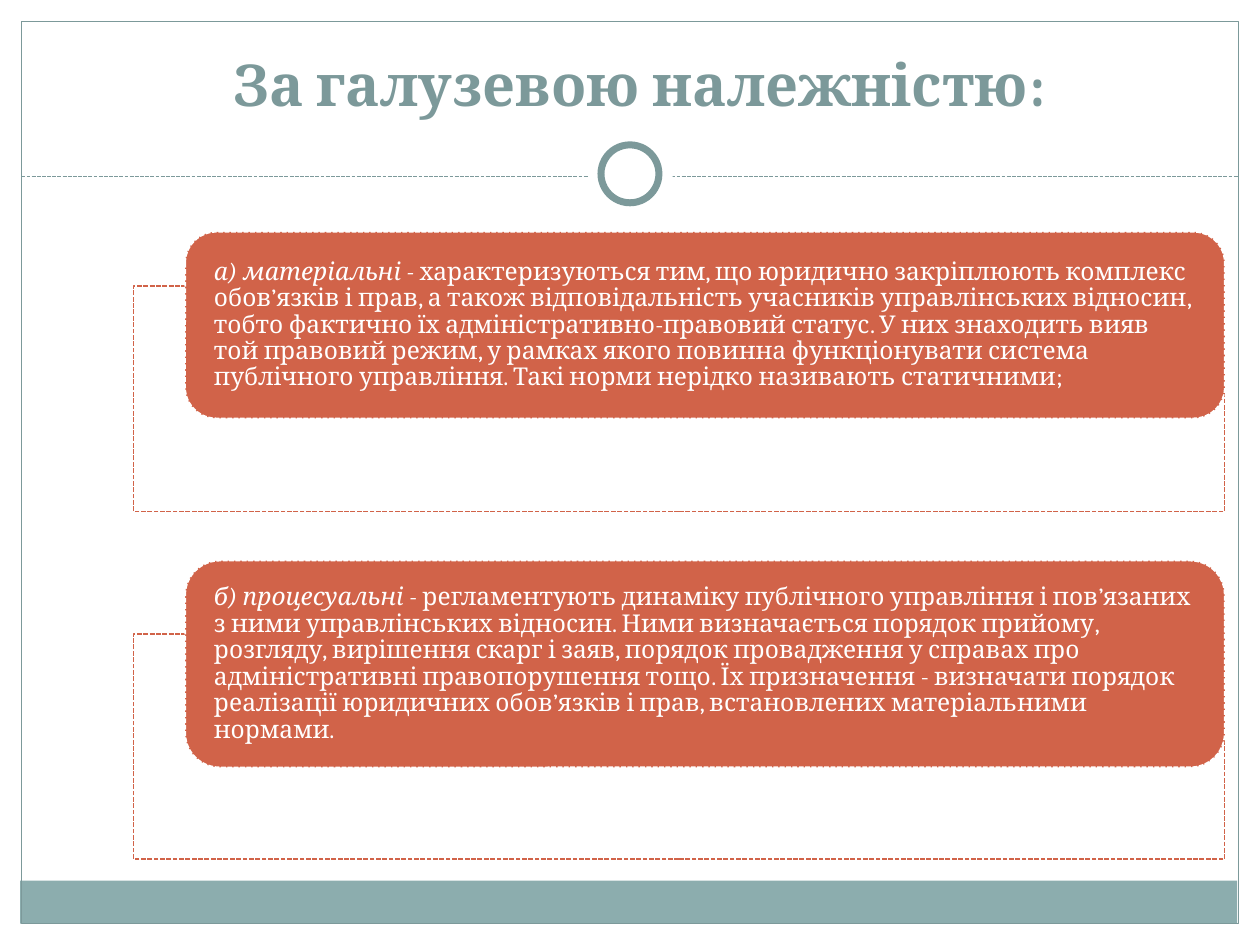
from pptx import Presentation
from pptx.dml.color import RGBColor
from pptx.enum.dml import MSO_LINE
from pptx.enum.shapes import MSO_CONNECTOR, MSO_SHAPE
from pptx.enum.text import MSO_ANCHOR, PP_ALIGN
from pptx.oxml.ns import qn
from pptx.util import Inches, Pt
from lxml.etree import SubElement

FONT = "Cambria"
COLORS = {"white": "FFFFFF", "teal": "7C999A", "band": "8CADAE", "rust": "D16349"}

# Frame top, card top, card height, lead words, explanation
NORMS = [
    (2.27, 1.84, 1.48, "а) матеріальні -",
     " характеризуються тим, що юридично закріплюють комплекс обов’язків і прав, "
     "а також відповідальність учасників управлінських відносин, тобто фактично їх "
     "адміністративно-правовий статус. У них знаходить вияв той правовий режим, у рамках "
     "якого повинна функціонувати система публічного управління. Такі норми нерідко "
     "називають статичними;"),
    (5.03, 4.45, 1.64, "б) процесуальні -",
     " регламентують динаміку публічного управління і пов’язаних з ними управлінських "
     "відносин. Ними визначається порядок прийому, розгляду, вирішення скарг і заяв, "
     "порядок провадження у справах про адміністративні правопорушення тощо. Їх "
     "призначення - визначати порядок реалізації юридичних обов’язків і прав, "
     "встановлених матеріальними нормами."),
]


def rgb(name):
    return RGBColor.from_string(COLORS[name])


def style_line(line, color, width, dashed=False):
    line.color.rgb = rgb(color)
    line.width = Pt(width)
    if dashed:
        line.dash_style = MSO_LINE.SQUARE_DOT


def add_box(slide, kind, box, fill=None, line=None, width=0.75, dashed=False):
    sp = slide.shapes.add_shape(kind, *map(Inches, box))
    sp.shadow.inherit = False
    if fill:
        sp.fill.solid()
        sp.fill.fore_color.rgb = rgb(fill)
    else:
        sp.fill.background()
    if line:
        style_line(sp.line, line, width, dashed)
    else:
        sp.line.fill.background()
    return sp


def add_rule(slide, x1, x2, y):
    cn = slide.shapes.add_connector(
        MSO_CONNECTOR.STRAIGHT, Inches(x1), Inches(y), Inches(x2), Inches(y))
    style_line(cn.line, "teal", 0.75, dashed=True)
    SubElement(cn._element.spPr, qn("a:effectLst"))


def add_run(p, text, size, color, bold=False, italic=False):
    r = p.add_run()
    r.text = text
    r.font.name = FONT
    r.font.size = Pt(size)
    r.font.color.rgb = rgb(color)
    r.font.bold = bold
    r.font.italic = italic


def set_margins(tf, side=0.1, top=0.05):
    tf.margin_left = tf.margin_right = Inches(side)
    tf.margin_top = tf.margin_bottom = Inches(top)


def add_title(slide, text):
    sp = slide.shapes.title
    sp.left, sp.top, sp.width, sp.height = map(Inches, (0.5, 0.3, 9.15, 0.69))
    tf = sp.text_frame
    tf.word_wrap = True
    tf.vertical_anchor = MSO_ANCHOR.BOTTOM
    set_margins(tf)
    p = tf.paragraphs[0]
    p.alignment = PP_ALIGN.CENTER
    add_run(p, text, 33, "teal", bold=True)


def add_decor(slide):
    add_box(slide, MSO_SHAPE.RECTANGLE, (0.16, 6.99, 9.66, 0.34), fill="band")
    add_box(slide, MSO_SHAPE.RECTANGLE, (0.17, 0.17, 9.66, 7.16), line="teal")
    add_rule(slide, 0.17, 9.83, 1.4)
    # White disc breaks the rule around the ring
    add_box(slide, MSO_SHAPE.OVAL, (4.67, 1.05, 0.67, 0.67), fill="white")
    add_box(slide, MSO_SHAPE.OVAL, (4.77, 1.15, 0.46, 0.46), fill="white",
            line="teal", width=4)


def add_norm(slide, frame_top, card_top, height, lead, body):
    add_box(slide, MSO_SHAPE.RECTANGLE, (1.06, frame_top, 8.66, 1.79), fill="white",
            line="rust", width=0.9, dashed=True)
    sp = add_box(slide, MSO_SHAPE.ROUNDED_RECTANGLE, (1.47, card_top, 8.25, height),
                 fill="rust", line="white", width=0.9, dashed=True)
    tf = sp.text_frame
    tf.word_wrap = True
    tf.vertical_anchor = MSO_ANCHOR.MIDDLE
    # Rounded corners already inset the text by about 5% of the height
    set_margins(tf, side=0.23 - 0.05 * height, top=0)
    p = tf.paragraphs[0]
    p.alignment = PP_ALIGN.LEFT
    p.line_spacing = 0.9
    add_run(p, lead, 14, "white", italic=True)
    add_run(p, body, 14, "white")


def main():
    prs = Presentation()
    prs.slide_width, prs.slide_height = Inches(10), Inches(7.5)
    slide = prs.slides.add_slide(prs.slide_layouts[5])
    add_decor(slide)
    add_title(slide, "За галузевою належністю:")
    for norm in NORMS:
        add_norm(slide, *norm)
    prs.save("out.pptx")


if __name__ == "__main__":
    main()
